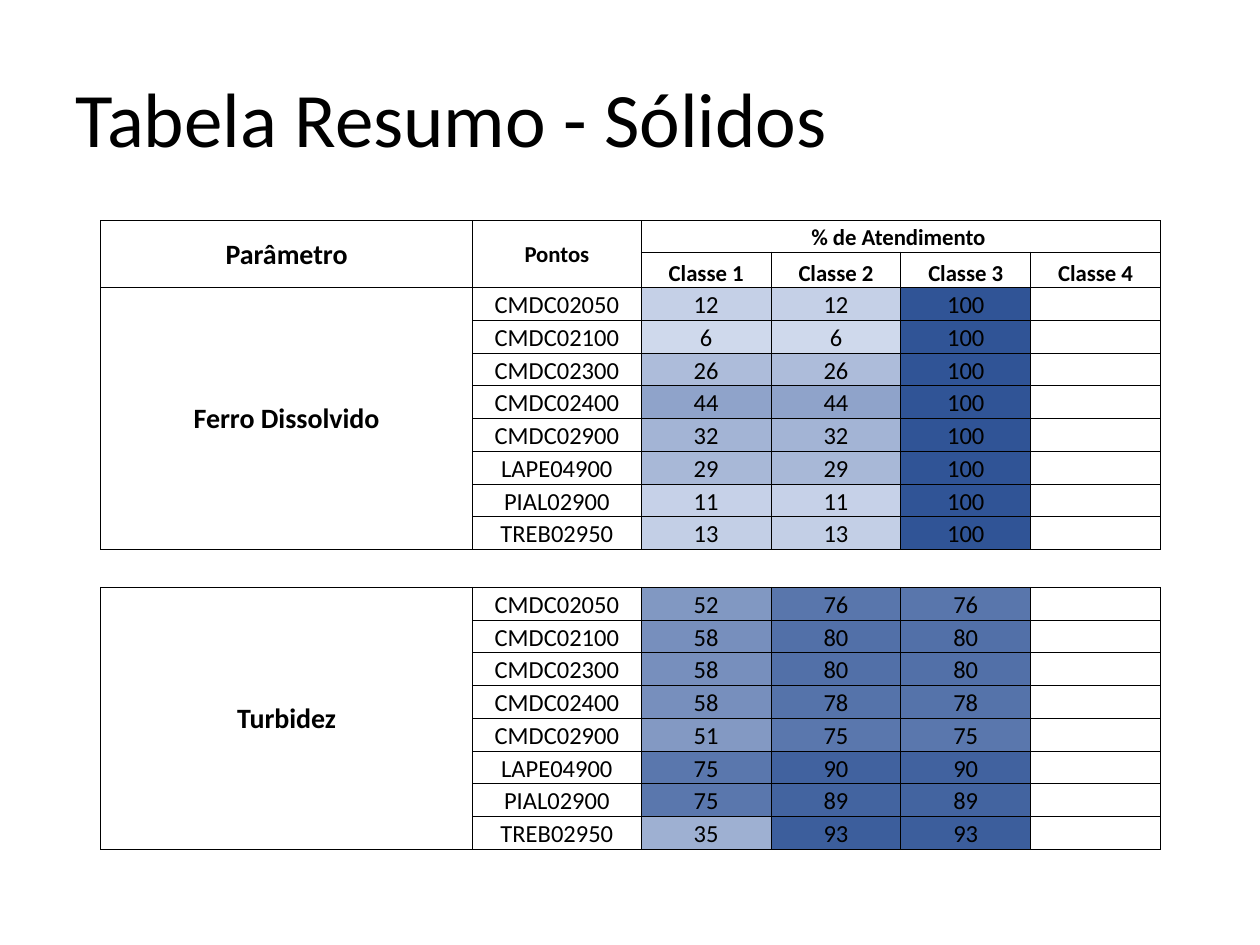
from lxml import etree
from pptx import Presentation
from pptx.dml.color import RGBColor
from pptx.enum.text import MSO_ANCHOR as A, PP_ALIGN
from pptx.oxml.ns import qn
from pptx.util import Inches, Pt

TITLE = "Tabela Resumo - Sólidos"
CLASSES = ["Classe 1", "Classe 2", "Classe 3", "Classe 4"]
POINTS = ["CMDC02050", "CMDC02100", "CMDC02300", "CMDC02400",
          "CMDC02900", "LAPE04900", "PIAL02900", "TREB02950"]
PARAMETERS = {
    "Ferro Dissolvido": [(12, 12, 100), (6, 6, 100), (26, 26, 100), (44, 44, 100),
                         (32, 32, 100), (29, 29, 100), (11, 11, 100), (13, 13, 100)],
    "Turbidez": [(52, 76, 76), (58, 80, 80), (58, 80, 80), (58, 78, 78),
                 (51, 75, 75), (75, 90, 90), (75, 89, 89), (35, 93, 93)],
}
COLS = [2.95, 1.34] + [1.03] * 4
BLOCK = [0.26] * len(POINTS)
ROWS = [0.25, 0.28] + BLOCK + [0.3] + BLOCK
GAP = 2 + len(POINTS)
LOW, HIGH = "D9E1F2", "305496"


def rgb(value):
    return RGBColor.from_string(value)


def shade(value):
    pairs = zip(rgb(LOW), rgb(HIGH))
    return "".join(f"{round(a + (b - a) * value / 100):02X}" for a, b in pairs)


def write(tf, text, size=14, bold=False, align=PP_ALIGN.CENTER, color="000000"):
    p = tf.paragraphs[0]
    p.alignment = align
    r = p.add_run()
    r.text = text
    r.font.name, r.font.size, r.font.bold = "Calibri", Pt(size), bold
    r.font.color.rgb = rgb(color)


def border(cell, sides):
    tc_pr = cell._tc.get_or_add_tcPr()
    for side in "LRTB":
        ln = etree.SubElement(tc_pr, qn(f"a:ln{side}"), w=str(Pt(0.5)))
        if side in sides:
            fill = etree.SubElement(ln, qn("a:solidFill"))
            etree.SubElement(fill, qn("a:srgbClr"), val="000000")
        else:
            etree.SubElement(ln, qn("a:noFill"))


def prepare(cell, sides):
    cell.margin_left = cell.margin_right = cell.margin_top = Inches(0.01)
    cell.margin_bottom = 0
    cell.vertical_anchor = A.BOTTOM
    border(cell, sides)
    cell.fill.background()
    p = cell.text_frame.paragraphs[0]
    etree.SubElement(p._p, qn("a:endParaRPr"), sz="1200")


def merged(table, row, col, last_row, last_col, text, size, anchor=A.MIDDLE):
    cell = table.cell(row, col)
    cell.merge(table.cell(last_row, last_col))
    cell.vertical_anchor = anchor
    write(cell.text_frame, text, size=size, bold=True)


def fill_block(table, top, name, values):
    merged(table, top, 0, top + len(POINTS) - 1, 0, name, 16)
    for row, (point, results) in enumerate(zip(POINTS, values), top):
        write(table.cell(row, 1).text_frame, point)
        for col, value in enumerate(results, 2):
            cell = table.cell(row, col)
            write(cell.text_frame, str(value))
            cell.fill.solid()
            cell.fill.fore_color.rgb = rgb(shade(value))


def main():
    """Build the summary slide of solids compliance by class."""
    prs = Presentation()
    prs.slide_width, prs.slide_height = Inches(10), Inches(7.5)
    s = prs.slides.add_slide(prs.slide_layouts[5])
    title = s.shapes.title
    title.left, title.top, title.width, title.height = map(Inches, (0.5, 0.3, 9, 1.25))
    title.text_frame.vertical_anchor = A.MIDDLE
    write(title.text_frame, TITLE, size=44, align=PP_ALIGN.LEFT)

    box = map(Inches, (0.8, 1.75, sum(COLS), sum(ROWS)))
    table = s.shapes.add_table(len(ROWS), len(COLS), *box).table
    table.first_row = table.horz_banding = False
    for col, width in zip(table.columns, COLS):
        col.width = Inches(width)
    for i, (row, height) in enumerate(zip(table.rows, ROWS)):
        row.height = Inches(height)
        for cell in row.cells:
            prepare(cell, "TB" if i == GAP else "LRTB")

    merged(table, 0, 0, 1, 0, "Parâmetro", 16)
    merged(table, 0, 1, 1, 1, "Pontos", 13)
    merged(table, 0, 2, 0, 5, "% de Atendimento ", 13, A.BOTTOM)
    for col, name in enumerate(CLASSES, 2):
        write(table.cell(1, col).text_frame, name, size=13, bold=True)
    for top, (name, values) in zip((2, GAP + 1), PARAMETERS.items()):
        fill_block(table, top, name, values)
    prs.save("out.pptx")


if __name__ == "__main__":
    main()
